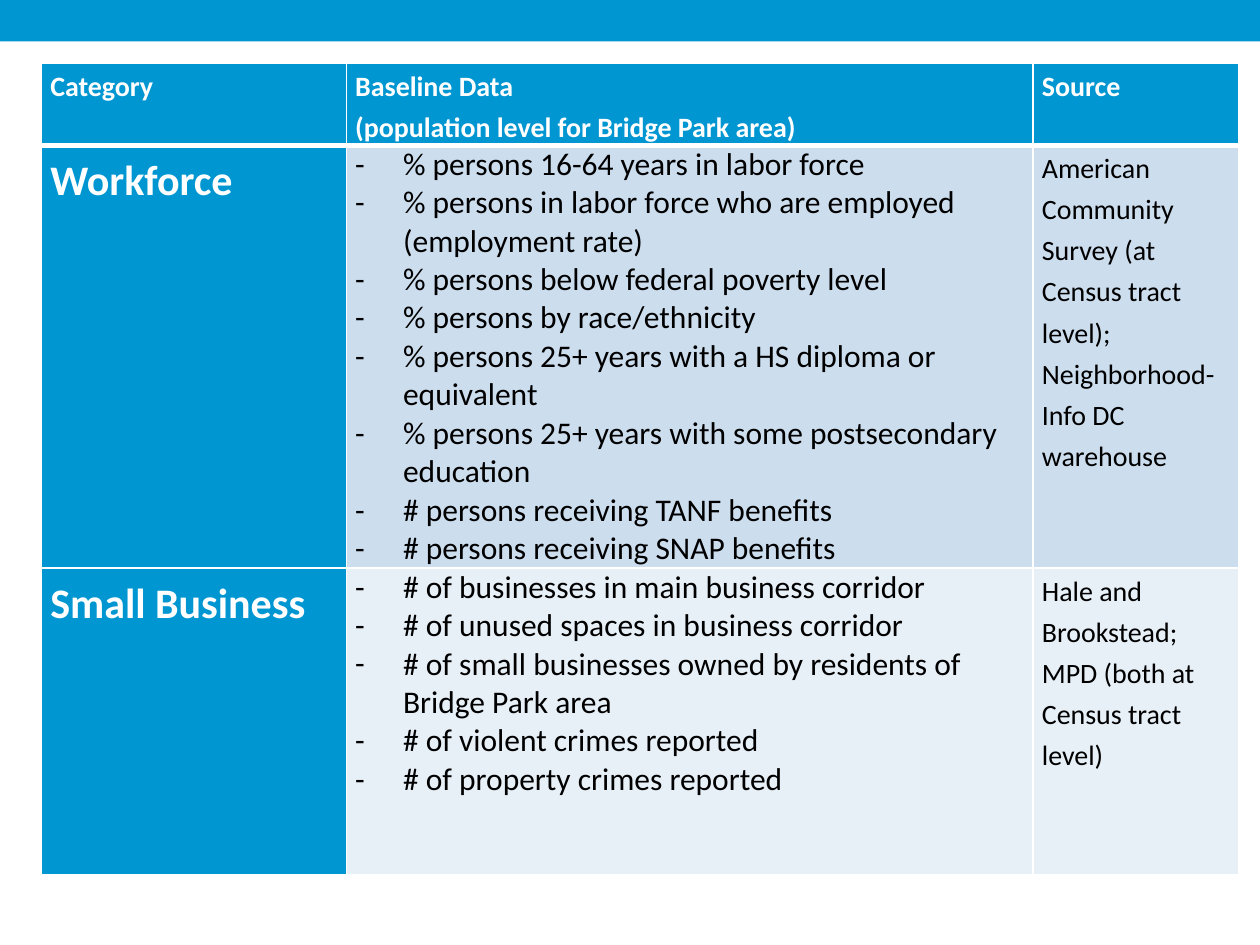
from lxml import etree
from pptx import Presentation
from pptx import util as u
from pptx.dml.color import RGBColor
from pptx.enum import shapes
from pptx.oxml.ns import qn

FONT = "Calibri"
COLORS = {
    "blue": "0096D2",
    "white": "FFFFFF",
    "black": "000000",
    "band_dark": "CCDDEE",
    "band_light": "E7EFF7",
}
COLUMN_WIDTHS = [2.42, 5.45, 1.63]
ROW_HEIGHTS = [0.64, 3.34, 2.43]
HEADERS = ["Category", "Baseline Data \v(population level for Bridge Park area)", "Source"]
CATEGORIES = [
    ("Workforce", [
        "% persons 16-64 years in labor force",
        "% persons in labor force who are employed (employment rate)",
        "% persons below federal poverty level",
        "% persons by race/ethnicity",
        "% persons 25+ years with a HS diploma or equivalent",
        "% persons 25+ years with some postsecondary education",
        "# persons receiving TANF benefits",
        "# persons receiving SNAP benefits",
    ], "American Community Survey (at Census tract level); Neighborhood-Info DC warehouse",
     "band_dark"),
    ("Small Business", [
        "# of businesses in main business corridor",
        "# of unused spaces in business corridor",
        "# of small businesses owned by residents of Bridge Park area",
        "# of violent crimes reported",
        "# of property crimes reported",
    ], "Hale and Brookstead; MPD (both at Census tract level)", "band_light"),
]


def color(name):
    return RGBColor.from_string(COLORS[name])


def add_child(parent, tag, **attributes):
    return etree.SubElement(parent, qn(tag), attributes)


def format_runs(paragraph, size, color_name, bold):
    for run in paragraph.runs:
        run.font.name = FONT
        run.font.size = u.Pt(size)
        run.font.bold = bold
        run.font.color.rgb = color(color_name)
    for line_break in paragraph._p.findall(qn("a:br")):
        add_child(line_break, "a:rPr", sz=str(size * 100))


def style_cell(cell, fill, top, bottom):
    cell.margin_left = cell.margin_right = u.Inches(0.07)
    cell.margin_top = cell.margin_bottom = 0
    properties = cell._tc.get_or_add_tcPr()
    for side, width in (("L", 1), ("R", 1), ("T", top), ("B", bottom)):
        line = add_child(properties, f"a:ln{side}", w=str(u.Pt(width)))
        line_fill = add_child(line, "a:solidFill")
        add_child(line_fill, "a:srgbClr", val=COLORS["white"])
    cell.fill.solid()
    cell.fill.fore_color.rgb = color(fill)


def write_label(cell, label, size, color_name, bold):
    paragraph = cell.text_frame.paragraphs[0]
    paragraph.text = label
    paragraph.line_spacing = 1.2
    paragraph.space_before = u.Pt(6)
    paragraph.space_after = u.Pt(12)
    format_runs(paragraph, size, color_name, bold)


def write_bullets(cell, items):
    cell.text_frame.text = "\n".join(items)
    for paragraph in cell.text_frame.paragraphs:
        properties = paragraph._p.get_or_add_pPr()
        properties.set("marL", str(u.Inches(0.38)))
        properties.set("indent", str(u.Inches(-0.38)))
        add_child(properties, "a:buFont", typeface=FONT)
        add_child(properties, "a:buChar", char="-")
        format_runs(paragraph, 18, "black", False)


def add_top_band(slide, left, top, width, height):
    band = slide.shapes.add_shape(shapes.MSO_SHAPE.RECTANGLE, left, top, width, height)
    band.shadow.inherit = False
    band.fill.solid()
    band.fill.fore_color.rgb = color("blue")
    band.line.fill.background()


def add_data_table(slide, left, top, width, height):
    table = slide.shapes.add_table(
        len(ROW_HEIGHTS), len(COLUMN_WIDTHS), left, top, width, height).table
    for column, column_width in zip(table.columns, COLUMN_WIDTHS):
        column.width = u.Inches(column_width)
    for row, row_height in zip(table.rows, ROW_HEIGHTS):
        row.height = u.Inches(row_height)

    # Header row
    for cell, header in zip(table.rows[0].cells, HEADERS):
        style_cell(cell, "blue", 1, 3)
        write_label(cell, header, 16, "white", True)

    # One row for each category
    for index, (name, measures, source, band) in enumerate(CATEGORIES, 1):
        cells = list(table.rows[index].cells)
        for cell, fill in zip(cells, ("blue", band, band)):
            style_cell(cell, fill, 3 if index == 1 else 1, 1)
        write_label(cells[0], name, 24, "white", True)
        write_bullets(cells[1], measures)
        write_label(cells[2], source, 16, "black", False)


def main():
    presentation = Presentation()
    presentation.slide_width = u.Inches(10)
    presentation.slide_height = u.Inches(7.5)
    slide = presentation.slides.add_slide(presentation.slide_layouts[6])
    add_top_band(slide, 0, 0, presentation.slide_width, u.Inches(0.33))
    add_data_table(slide, u.Inches(0.33), u.Inches(0.5),
                   u.Inches(sum(COLUMN_WIDTHS)), u.Inches(sum(ROW_HEIGHTS)))
    presentation.save("out.pptx")


if __name__ == "__main__":
    main()
